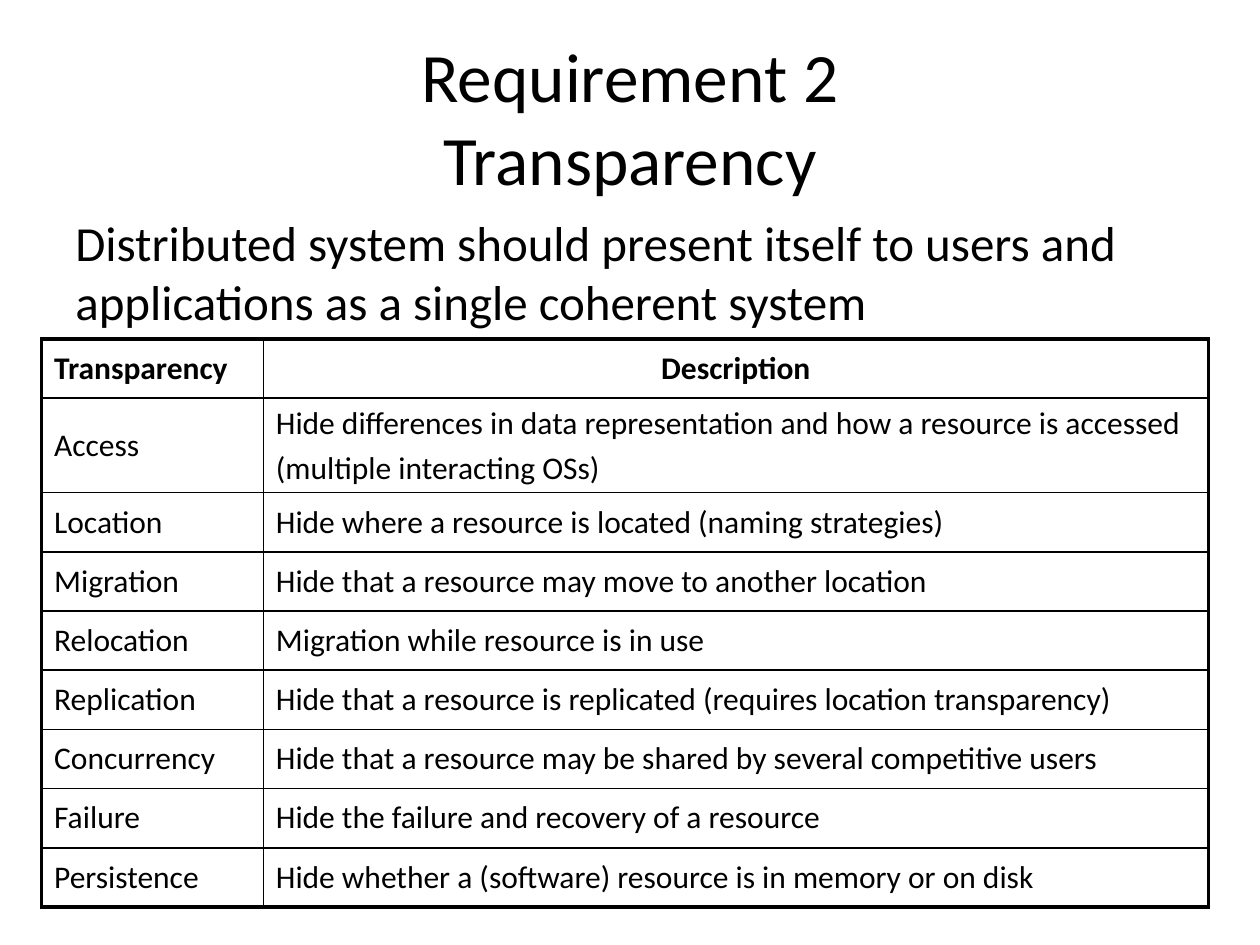
import pptx
import pptx.dml.color
import pptx.enum.text
import pptx.oxml.ns
import pptx.util
from lxml import etree
from pptx.util import Inches

TITLE = "Requirement 2\vTransparency"
SUMMARY = "Distributed system should present itself to users and applications as a single coherent system"
TRANSPARENCIES = [
    ("Transparency", "Description"),
    ("Access", "Hide differences in data representation and how a resource is accessed\n(multiple interacting OSs)"),
    ("Location", "Hide where a resource is located (naming strategies)"),
    ("Migration", "Hide that a resource may move to another location"),
    ("Relocation", "Migration while resource is in use"),
    ("Replication", "Hide that a resource is replicated (requires location transparency)"),
    ("Concurrency", "Hide that a resource may be shared by several competitive users"),
    ("Failure", "Hide the failure and recovery of a resource"),
    ("Persistence", "Hide whether a (software) resource is in memory or on disk"),
]
COLUMN_WIDTHS = (1.76, 7.5)
ROW_HEIGHT, TWO_LINE_HEIGHT = 0.47, 0.74
INK = "000000"
FONT = "Calibri"
OUTER, INNER = 2.25, 1
CENTER = pptx.enum.text.PP_ALIGN.CENTER
LEFT = pptx.enum.text.PP_ALIGN.LEFT
MIDDLE = pptx.enum.text.MSO_ANCHOR.MIDDLE
TOP = pptx.enum.text.MSO_ANCHOR.TOP


def color(value):
    return pptx.dml.color.RGBColor.from_string(value)


def write(frame, text, size, align=LEFT, bold=False, spacing=0.2):
    frame.text = text
    for paragraph in frame.paragraphs:
        paragraph.alignment = align
        paragraph.space_before = pptx.util.Pt(round(size * spacing, 1))
        paragraph.font.name = FONT
        paragraph.font.size = pptx.util.Pt(size)
        paragraph.font.bold = bold
        paragraph.font.color.rgb = color(INK)


def add_text(slide, box, text, size, anchor, **style):
    frame = slide.shapes.add_textbox(*map(Inches, box)).text_frame
    frame.word_wrap = True
    frame.vertical_anchor = anchor
    write(frame, text, size, **style)


def set_borders(cell, widths):
    qn = pptx.oxml.ns.qn
    properties = cell._tc.get_or_add_tcPr()
    for side, width in widths.items():
        line = etree.SubElement(properties, qn(f"a:ln{side}"), w=str(pptx.util.Pt(width)))
        fill = etree.SubElement(line, qn("a:solidFill"))
        etree.SubElement(fill, qn("a:srgbClr"), val=INK)


def add_transparency_table(slide):
    heights = [TWO_LINE_HEIGHT if "\n" in description else ROW_HEIGHT
               for _, description in TRANSPARENCIES]
    last_row, last_column = len(heights) - 1, len(COLUMN_WIDTHS) - 1
    table = slide.shapes.add_table(
        len(heights), len(COLUMN_WIDTHS), Inches(0.33), Inches(2.69),
        Inches(sum(COLUMN_WIDTHS)), Inches(sum(heights))).table
    table.first_row = False
    table.horz_banding = False
    for column, width in zip(table.columns, COLUMN_WIDTHS):
        column.width = Inches(width)
    for r, (height, entries) in enumerate(zip(heights, TRANSPARENCIES)):
        table.rows[r].height = Inches(height)
        for c, text in enumerate(entries):
            cell = table.cell(r, c)
            cell.vertical_anchor = MIDDLE
            heading = r == 0
            write(cell.text_frame, text, 18, CENTER if heading and c == last_column else LEFT, heading)
            set_borders(cell, {
                "L": OUTER if c == 0 else INNER,
                "R": OUTER if c == last_column else INNER,
                "T": OUTER if r == 0 else INNER,
                "B": OUTER if r == last_row else INNER,
            })
            cell.fill.background()


def main():
    deck = pptx.Presentation()
    deck.slide_width, deck.slide_height = Inches(10), Inches(7.5)
    slide = deck.slides.add_slide(deck.slide_layouts[6])
    add_text(slide, (0.5, 0.3, 9, 1.25), TITLE, 39.6, MIDDLE, align=CENTER, spacing=0)
    add_text(slide, (0.5, 1.64, 9, 0.94), SUMMARY, 28, TOP)
    add_transparency_table(slide)
    deck.save("out.pptx")


if __name__ == "__main__":
    main()
